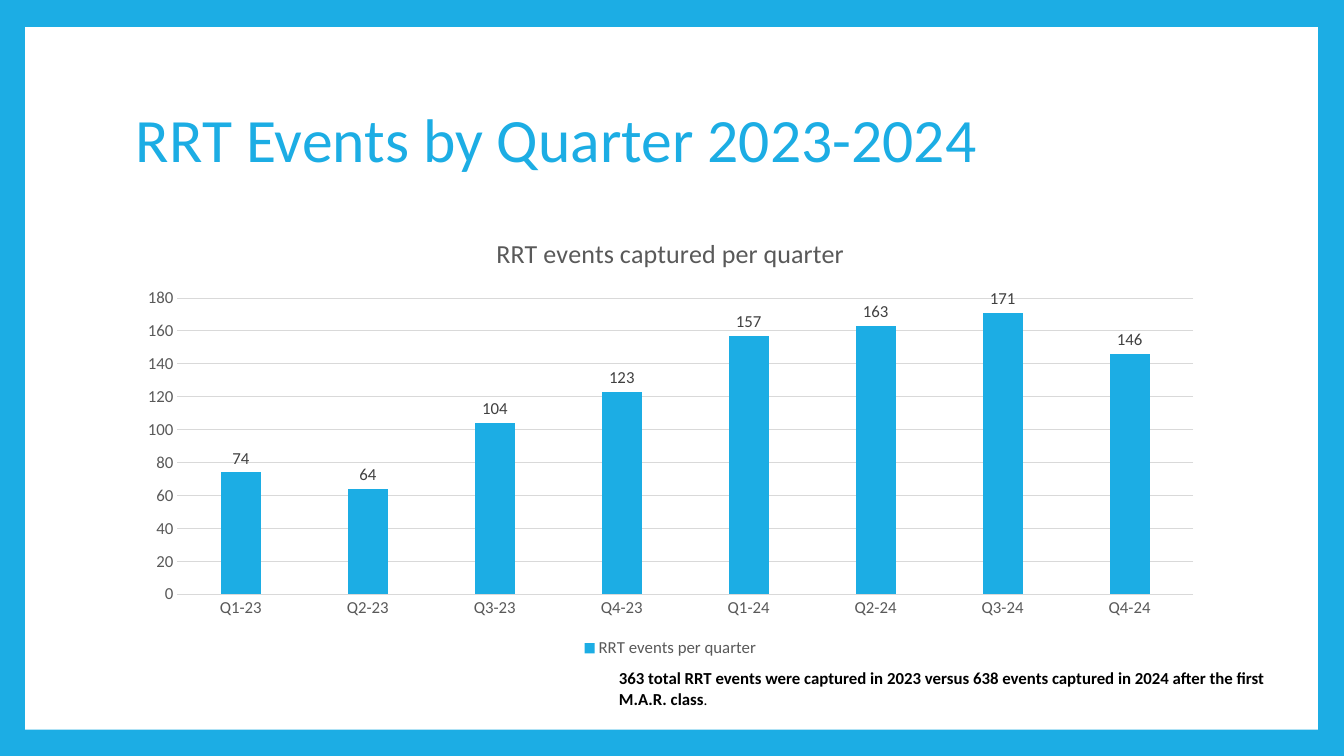
import pptx
import pptx.chart.data
import pptx.dml.color
import pptx.enum.chart
import pptx.enum.shapes
import pptx.enum.text
import pptx.util
from pptx.util import Inches

HUES = {"blue": "1CADE4", "white": "FFFFFF", "black": "000000",
        "gray": "595959", "dark": "404040", "rule": "D9D9D9"}
FACE = "Calibri"


def tint(name):
    return pptx.dml.color.RGBColor.from_string(HUES[name])


def style(font, size, hue, bold=False):
    font.name = FACE
    font.size = pptx.util.Pt(size)
    font.bold = bold
    font.color.rgb = tint(hue)


deck = pptx.Presentation()
deck.slide_width = Inches(13.33)
deck.slide_height = Inches(7.5)
slide = deck.slides.add_slide(deck.slide_layouts[6])
slide.background.fill.solid()
slide.background.fill.fore_color.rgb = tint("blue")

panel = slide.shapes.add_shape(
    pptx.enum.shapes.MSO_SHAPE.RECTANGLE,
    Inches(0.25), Inches(0.27), Inches(12.82), Inches(6.97))
panel.shadow.inherit = False
panel.fill.solid()
panel.fill.fore_color.rgb = tint("white")
panel.line.fill.background()

title = slide.shapes.add_textbox(
    Inches(1.25), Inches(0.67), Inches(10.8), Inches(1.48)).text_frame
title.word_wrap = True
title.vertical_anchor = pptx.enum.text.MSO_ANCHOR.MIDDLE
title.text = "RRT Events by Quarter 2023-2024"
title.paragraphs[0].line_spacing = 0.9
style(title.paragraphs[0].runs[0].font, 44, "blue")

data = pptx.chart.data.CategoryChartData()
data.categories = [f"Q{q}-{year}" for year in (23, 24) for q in range(1, 5)]
data.add_series("RRT events per quarter",
                (74, 64, 104, 123, 157, 163, 171, 146))
chart = slide.shapes.add_chart(
    pptx.enum.chart.XL_CHART_TYPE.COLUMN_CLUSTERED,
    Inches(1.25), Inches(2.15), Inches(10.8), Inches(4.42), data).chart
style(chart.font, 12, "gray")

chart.has_title = True
head = chart.chart_title.text_frame
head.text = "RRT events captured per quarter"
style(head.paragraphs[0].runs[0].font, 18.6, "gray")
chart.chart_title.include_in_layout = False

chart.has_legend = True
chart.legend.position = pptx.enum.chart.XL_LEGEND_POSITION.BOTTOM
chart.legend.include_in_layout = False
style(chart.legend.font, 12, "gray")

for axis in (chart.category_axis, chart.value_axis):
    axis.major_tick_mark = pptx.enum.chart.XL_TICK_MARK.NONE
    axis.minor_tick_mark = pptx.enum.chart.XL_TICK_MARK.NONE
    style(axis.tick_labels.font, 12, "gray")

scale = chart.value_axis
scale.minimum_scale = 0
scale.maximum_scale = 180
scale.major_unit = 20
scale.format.line.fill.background()
for line in (chart.category_axis.format.line,
             scale.major_gridlines.format.line):
    line.color.rgb = tint("rule")
    line.width = pptx.util.Pt(0.75)

plot = chart.plots[0]
plot.vary_by_categories = False
plot.gap_width = 219
plot.overlap = -27
bars = plot.series[0]
bars.format.fill.solid()
bars.format.fill.fore_color.rgb = tint("blue")
labels = bars.data_labels
labels.show_value = True
labels.position = pptx.enum.chart.XL_LABEL_POSITION.OUTSIDE_END
style(labels.font, 12, "dark")

note = slide.shapes.add_textbox(
    Inches(6.04), Inches(6.58), Inches(6.92), Inches(0.5)).text_frame
note.word_wrap = True
note.auto_size = pptx.enum.text.MSO_AUTO_SIZE.SHAPE_TO_FIT_TEXT
para = note.paragraphs[0]
para.text = ("363 total RRT events were captured in 2023 versus 638 events "
             "captured in 2024 after the first M.A.R. class")
style(para.runs[0].font, 12, "black", True)
stop = para.add_run()
stop.text = "."
style(stop.font, 11, "black")

deck.save("out.pptx")
